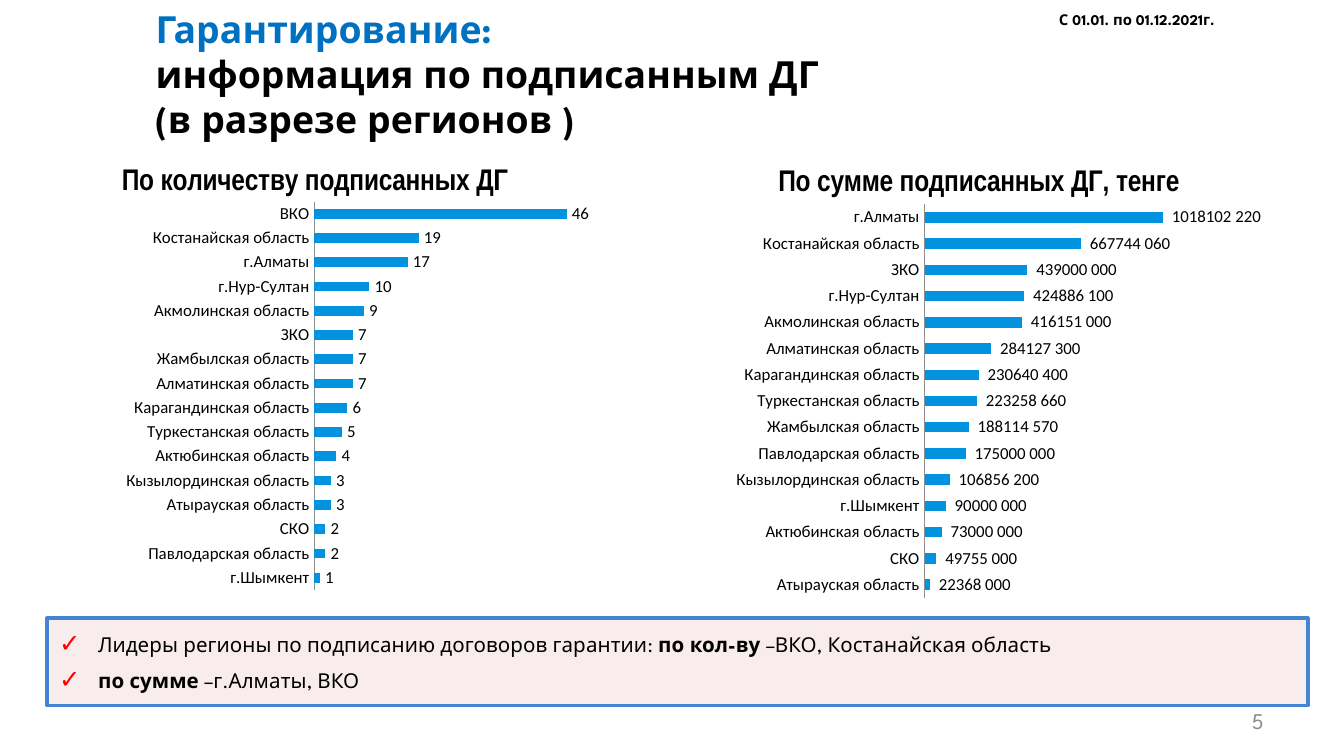
from lxml.etree import SubElement
from pptx import Presentation
from pptx.chart.data import CategoryChartData
from pptx.dml.color import RGBColor
from pptx.enum.chart import XL_CHART_TYPE, XL_LABEL_POSITION, XL_TICK_MARK
from pptx.enum.shapes import MSO_SHAPE
from pptx.enum.text import MSO_ANCHOR, PP_ALIGN
from pptx.oxml import parse_xml
from pptx.oxml.ns import nsdecls, qn
from pptx.util import Inches, Pt

BLACK = RGBColor(0, 0, 0)
BLUE = RGBColor(0x00, 0x70, 0xC0)
BAR = RGBColor(0x02, 0x93, 0xE0)
GREY = RGBColor(0x8C, 0x8C, 0x8C)
PINK = RGBColor(0xF2, 0xDC, 0xDB)
EDGE = RGBColor(0x45, 0x84, 0xD3)
RED = RGBColor(0xFF, 0, 0)

COUNTS = [
    ("г.Шымкент", 1), ("Павлодарская область", 2), ("СКО", 2),
    ("Атырауская область", 3), ("Кызылординская область", 3),
    ("Актюбинская область", 4), ("Туркестанская область", 5),
    ("Карагандинская область", 6), ("Алматинская область", 7),
    ("Жамбылская область", 7), ("ЗКО", 7), ("Акмолинская область", 9),
    ("г.Нур-Султан", 10), ("г.Алматы", 17), ("Костанайская область", 19),
    ("ВКО", 46),
]
SUMS = [
    ("Атырауская область", 22368000), ("СКО", 49755000),
    ("Актюбинская область", 73000000), ("г.Шымкент", 90000000),
    ("Кызылординская область", 106856200), ("Павлодарская область", 175000000),
    ("Жамбылская область", 188114570), ("Туркестанская область", 223258660),
    ("Карагандинская область", 230640400), ("Алматинская область", 284127300),
    ("Акмолинская область", 416151000), ("г.Нур-Султан", 424886100),
    ("ЗКО", 439000000), ("Костанайская область", 667744060),
    ("г.Алматы", 1018102220),
]
MONEY = r"_-* #\ ##0_р_._-"


class Deck:
    face = "League Spartan"
    chart_face = "Calibri"
    title_face = "Arial Narrow"

    def __init__(self, wide, high):
        self.prs = Presentation()
        self.prs.slide_width = Inches(wide)
        self.prs.slide_height = Inches(high)
        self.slide = self.prs.slides.add_slide(self.prs.slide_layouts[6])

    def style(self, font, face, size, color=BLACK, bold=False):
        font.name, font.size, font.bold = face, Pt(size), bold
        font.color.rgb = color

    def text(self, box, lines, size, color=BLACK, bold=False, wrap=True):
        """Add a text box with one paragraph per line."""
        frame = self.slide.shapes.add_textbox(*map(Inches, box)).text_frame
        frame.word_wrap = wrap
        for i, line in enumerate(lines):
            para = frame.add_paragraph() if i else frame.paragraphs[0]
            para.text = line
            self.style(para.font, self.face, size, color, bold)
        return frame

    def bullet(self, para):
        props = para._p.get_or_add_pPr()
        props.set("marL", str(Inches(0.3)))
        props.set("indent", str(Inches(-0.29)))
        color = SubElement(props, qn("a:buClr"))
        SubElement(color, qn("a:srgbClr"), val=str(RED))
        SubElement(props, qn("a:buSzPct"), val="125000")
        SubElement(props, qn("a:buFont"), typeface="Arial")
        SubElement(props, qn("a:buChar"), char="✓")

    def panel(self, box, points):
        """Add a framed list; each point is a list of (text, bold) runs."""
        shape = self.slide.shapes.add_shape(MSO_SHAPE.RECTANGLE, *map(Inches, box))
        shape.shadow.inherit = False
        shape.fill.solid()
        shape.fill.fore_color.rgb = PINK
        tint = shape._element.spPr.find(qn("a:solidFill"))[0]
        SubElement(tint, qn("a:alpha"), val="50000")
        shape.line.color.rgb = EDGE
        shape.line.width = Pt(2)
        frame = shape.text_frame
        frame.word_wrap = True
        frame.vertical_anchor = MSO_ANCHOR.MIDDLE
        frame.margin_left = frame.margin_right = Inches(0.08)
        frame.margin_top = frame.margin_bottom = Inches(0.04)
        for i, runs in enumerate(points):
            para = frame.add_paragraph() if i else frame.paragraphs[0]
            para.alignment = PP_ALIGN.LEFT
            para.space_after = Pt(6)
            self.bullet(para)
            self.style(para.font, self.face, 11)
            for words, bold in runs:
                run = para.add_run()
                run.text = words
                run.font.bold = bold

    def bars(self, box, title, rows, top, inner, form="General"):
        """Add a bar chart; inner is the plot area in inches."""
        data = CategoryChartData(number_format=form)
        data.categories = [name for name, _ in rows]
        data.add_series("Series 1", [value for _, value in rows])
        chart = self.slide.shapes.add_chart(
            XL_CHART_TYPE.BAR_CLUSTERED, *map(Inches, box), data).chart
        self.style(chart.font, self.chart_face, 10)
        chart.has_legend = False
        chart.has_title = True
        head = chart.chart_title.text_frame.paragraphs[0]
        head.text = title
        self.style(head.font, self.title_face, 16, bold=True)
        chart.chart_title.include_in_layout = False

        axis = chart.category_axis
        axis.major_tick_mark = axis.minor_tick_mark = XL_TICK_MARK.NONE
        axis.format.line.color.rgb = GREY
        axis.format.line.width = Pt(0.5)
        self.style(axis.tick_labels.font, self.chart_face, 9)
        scale = chart.value_axis
        scale.visible = scale.has_major_gridlines = False
        scale.minimum_scale, scale.maximum_scale = 0, top

        plot = chart.plots[0]
        plot.gap_width = 150
        plot.vary_by_categories = False
        fill = plot.series[0].format.fill
        fill.solid()
        fill.fore_color.rgb = BAR
        plot.has_data_labels = True
        labels = plot.data_labels
        labels.show_value = True
        labels.position = XL_LABEL_POSITION.OUTSIDE_END
        labels.number_format = form
        labels.number_format_is_linked = False
        self.style(labels.font, self.chart_face, 9)
        wide, high = box[2:]
        self.place(chart, [a / b for a, b in zip(inner, (wide, high) * 2)])

    def place(self, chart, parts):
        """Fix the inner plot area, in fractions of the chart."""
        area = chart.element.find(".//" + qn("c:plotArea"))
        for old in area.findall(qn("c:layout")):
            area.remove(old)
        modes = '<c:xMode val="edge"/><c:yMode val="edge"/>'
        sizes = "".join(f'<c:{k} val="{v:.4f}"/>' for k, v in zip("xywh", parts))
        area.insert(0, parse_xml(
            f'<c:layout {nsdecls("c")}><c:manualLayout>'
            f'<c:layoutTarget val="inner"/>{modes}{sizes}'
            "</c:manualLayout></c:layout>"))


def main():
    deck = Deck(10, 10 * 9 / 16)
    page = deck.text((7.17, 5.21, 2.33, 0.3), ["5"], 12, GREY)
    page.vertical_anchor = MSO_ANCHOR.MIDDLE
    page.paragraphs[0].alignment = PP_ALIGN.RIGHT

    head = deck.text(
        (1.06, 0, 7.01, 0.89),
        ["Гарантирование: \vинформация по подписанным ДГ", "(в разрезе регионов )"],
        20, bold=True)
    head.paragraphs[0].runs[0].font.color.rgb = BLUE

    deck.panel((0.35, 4.6, 9.38, 0.65), [
        [("Лидеры регионы по подписанию договоров гарантии: ", False),
         ("по кол-ву ", True), ("–ВКО, Костанайская область", False)],
        [("по сумме ", True), ("–г.Алматы, ВКО", False)],
    ])
    deck.text((7.78, 0.03, 1.48, 0.24), ["С 01.01. по 01.12.2021г."], 8,
              bold=True, wrap=False)
    deck.bars((0, 1.07, 4.69, 3.45), "По количеству подписанных ДГ",
              COUNTS, 50, (2.34, 0.43, 2.04, 2.89))
    deck.bars((4.88, 1.08, 4.81, 3.5), "По сумме подписанных ДГ, тенге",
              SUMS, 1.2e9, (2, 0.44, 2.09, 2.93), MONEY)
    deck.prs.save("out.pptx")


if __name__ == "__main__":
    main()
